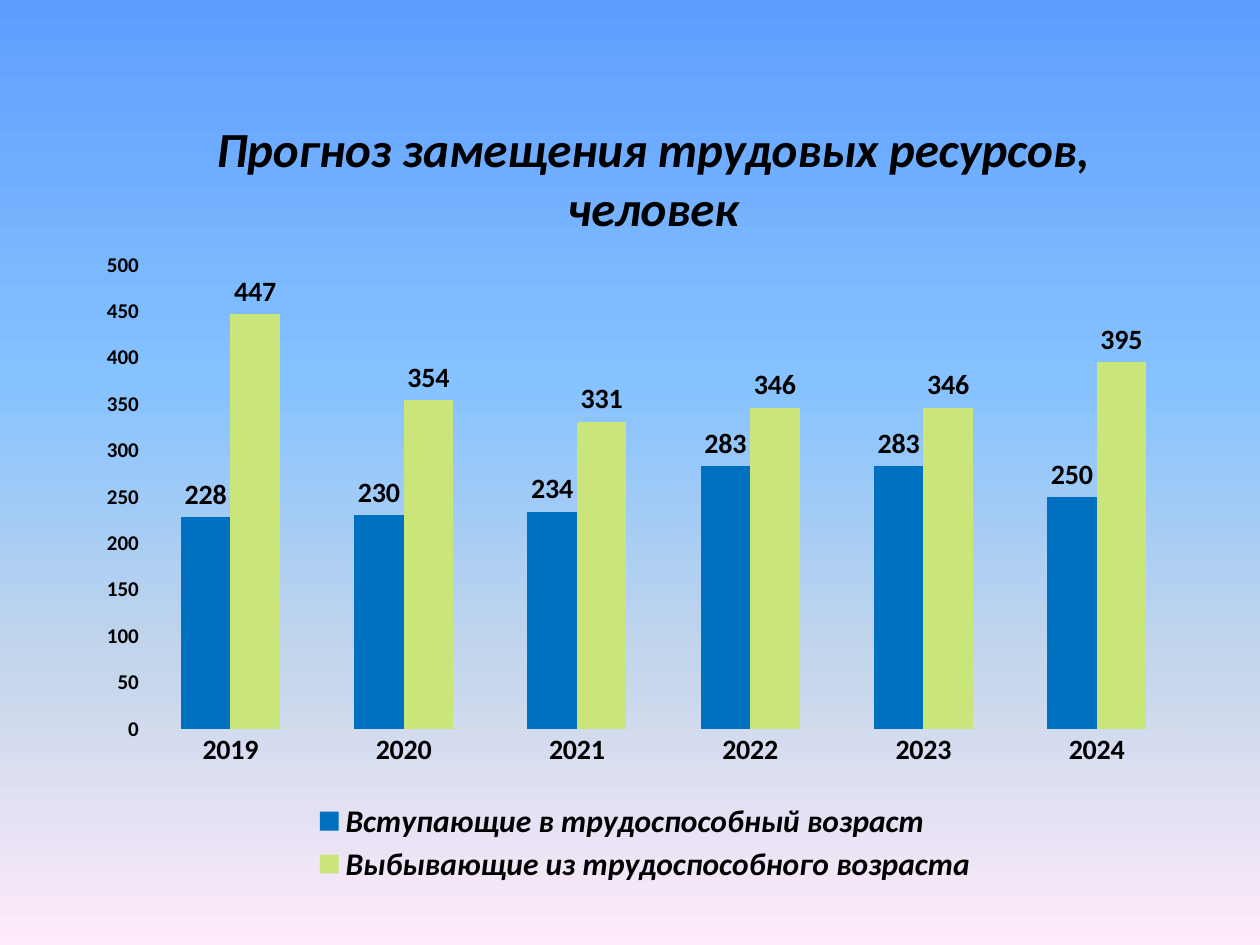
from lxml import etree
from pptx import Presentation
from pptx.chart.data import CategoryChartData
from pptx.dml.color import RGBColor
from pptx.enum.chart import (
    XL_CHART_TYPE, XL_LABEL_POSITION, XL_LEGEND_POSITION, XL_TICK_MARK)
from pptx.oxml.ns import qn
from pptx.util import Pt

COLUMNS = XL_CHART_TYPE.COLUMN_CLUSTERED
OUTSIDE_END = XL_LABEL_POSITION.OUTSIDE_END
BOTTOM = XL_LEGEND_POSITION.BOTTOM
NO_TICK = XL_TICK_MARK.NONE

# Content
TITLE = "Прогноз замещения трудовых ресурсов, человек"
YEARS = ["2019", "2020", "2021", "2022", "2023", "2024"]
BLACK = RGBColor(0x00, 0x00, 0x00)
BLUE = RGBColor(0x00, 0x70, 0xC0)
GREEN = RGBColor(0xCA, 0xE6, 0x7B)
LIGHT_GREY = RGBColor(0xD9, 0xD9, 0xD9)
SERIES = [
    ("Вступающие в трудоспособный возраст", [228, 230, 234, 283, 283, 250], BLUE),
    ("Выбывающие из трудоспособного возраста", [447, 354, 331, 346, 346, 395], GREEN),
]
BACKGROUND_STOPS = [
    (0, RGBColor(0x5E, 0x9E, 0xFF)),
    (40, RGBColor(0x85, 0xC2, 0xFF)),
    (70, RGBColor(0xC4, 0xD6, 0xEB)),
    (100, RGBColor(0xFF, 0xEB, 0xFA)),
]
FONT = "Calibri"


def format_font(font, size, italic=False):
    font.name = FONT
    font.size = Pt(size)
    font.bold = True
    font.italic = italic
    font.color.rgb = BLACK


def set_layout(parent, index, target=None, **fractions):
    """Place a chart part by fractions of the chart area."""
    for old in parent.findall(qn("c:layout")):
        parent.remove(old)
    layout = etree.Element(qn("c:layout"))
    manual = etree.SubElement(layout, qn("c:manualLayout"))
    settings = [("layoutTarget", target)] if target else []
    settings += [("xMode", "edge"), ("yMode", "edge"), *fractions.items()]
    for name, value in settings:
        etree.SubElement(manual, qn(f"c:{name}")).set("val", str(value))
    parent.insert(index, layout)


def paint_background(slide):
    fill = slide.background.fill
    fill.gradient()
    fill.gradient_angle = 270
    stop_list = next(slide.element.iter(qn("a:gsLst")))
    stop_list.clear()
    for percent, color in BACKGROUND_STOPS:
        stop = etree.SubElement(stop_list, qn("a:gs"), pos=str(percent * 1000))
        etree.SubElement(stop, qn("a:srgbClr"), val=str(color))


def add_forecast_chart(slide):
    data = CategoryChartData()
    data.categories = YEARS
    for name, values, _ in SERIES:
        data.add_series(name, values)
    chart = slide.shapes.add_chart(
        COLUMNS, Pt(48.24), Pt(37.44), Pt(640.8), Pt(470.88), data).chart
    chart.font.name = FONT
    chart.font.size = Pt(10)
    chart.font.color.rgb = BLACK

    # Title
    chart.has_title = True
    paragraph = chart.chart_title.text_frame.paragraphs[0]
    paragraph.text = TITLE
    format_font(paragraph.runs[0].font, 28, italic=True)
    set_layout(chart.chart_title.format.line and chart.chart_title.element
               if hasattr(chart.chart_title, "element")
               else next(chart.element.iter(qn("c:title"))), 1, x=0.11, y=0.05)

    # Columns and value labels
    plot = chart.plots[0]
    plot.gap_width = 150
    plot.overlap = 0
    plot.vary_by_categories = False
    for series, (_, _, color) in zip(plot.series, SERIES):
        series.format.fill.solid()
        series.format.fill.fore_color.rgb = color
        labels = series.data_labels
        labels.show_value = True
        labels.position = OUTSIDE_END
        format_font(labels.font, 16)
    set_layout(next(chart.element.iter(qn("c:plotArea"))), 0, "inner",
               x=0.053, y=0.242, w=0.927, h=0.563)

    # Axes
    for axis, size in ((chart.category_axis, 16), (chart.value_axis, 12)):
        axis.has_major_gridlines = False
        axis.major_tick_mark = axis.minor_tick_mark = NO_TICK
        format_font(axis.tick_labels.font, size)
    chart.category_axis.format.line.color.rgb = LIGHT_GREY
    chart.category_axis.format.line.width = Pt(0.75)
    chart.value_axis.format.line.fill.background()
    chart.value_axis.minimum_scale = 0
    chart.value_axis.maximum_scale = 500
    chart.value_axis.major_unit = 50

    # Legend
    chart.has_legend = True
    chart.legend.position = BOTTOM
    chart.legend.include_in_layout = False
    format_font(chart.legend.font, 18, italic=True)
    set_layout(next(chart.element.iter(qn("c:legend"))), 1,
               x=0.205, y=0.888, w=0.59, h=0.11)


def main():
    presentation = Presentation()
    presentation.slide_width, presentation.slide_height = Pt(720), Pt(540)
    slide = presentation.slides.add_slide(presentation.slide_layouts[6])
    paint_background(slide)
    add_forecast_chart(slide)
    presentation.save("out.pptx")


if __name__ == "__main__":
    main()
